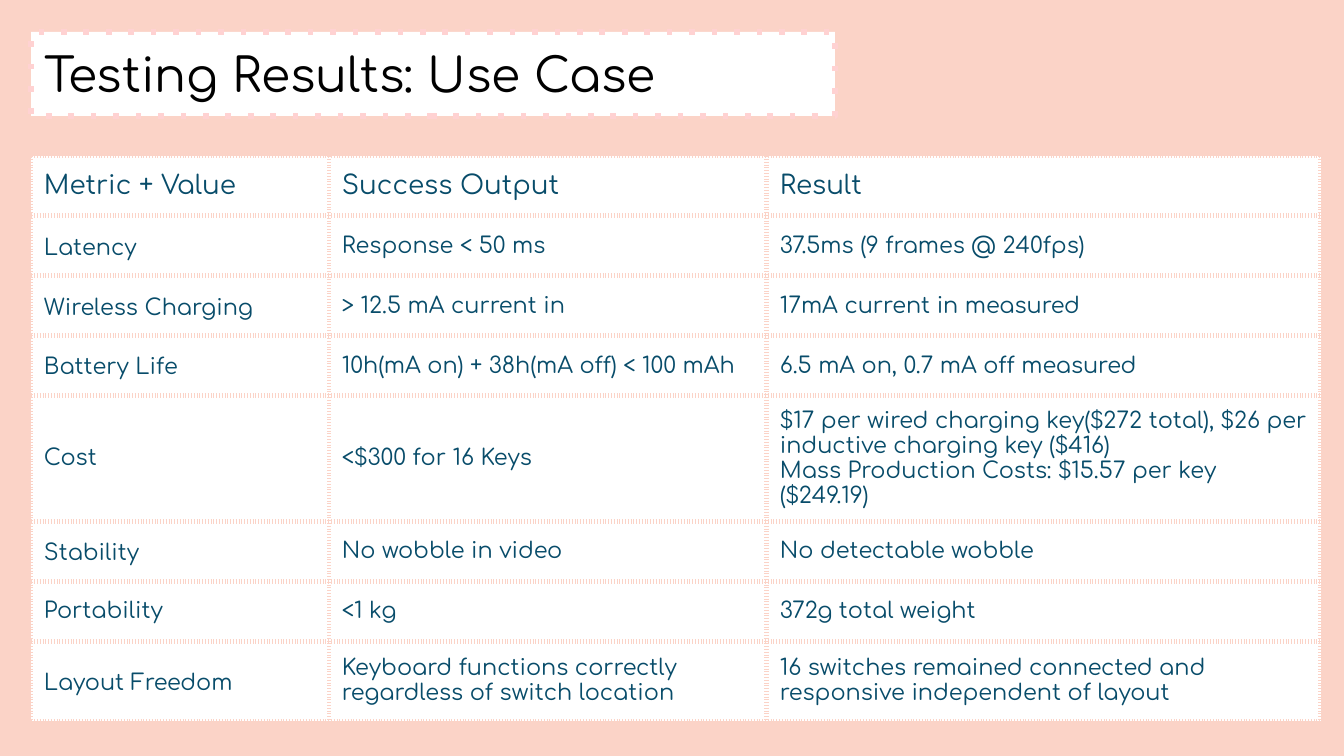
import pptx
import pptx.util
import pptx.dml.color
import pptx.enum.dml
import pptx.enum.shapes
import pptx.enum.text
import pptx.oxml
import pptx.oxml.ns

SCALE = 914400 / 134.4  # EMU per px
FONT = "Comfortaa"
COLORS = {
    "background": "FBD3C7",
    "title_line": "FFD2D2",
    "white": "FFFFFF",
    "black": "000000",
    "text": "084C6A",
}
INSET = 13
LINE_PT = 3

COLUMNS = [298, 438, 554]
ROW_HEIGHTS = [60, 60, 60, 60, 102, 60, 60, 80]
ROWS = [
    ("Metric + Value", "Success Output", "Result"),
    ("Latency", "Response < 50 ms", "37.5ms (9 frames @ 240fps)"),
    ("Wireless Charging", "> 12.5 mA current in", "17mA current in measured"),
    ("Battery Life", "10h(mA on) + 38h(mA off) < 100 mAh", "6.5 mA on, 0.7 mA off measured"),
    ("Cost", "<$300 for 16 Keys",
     "$17 per wired charging key($272 total), $26 per inductive charging key ($416)\n"
     "Mass Production Costs: $15.57 per key ($249.19)"),
    ("Stability", "No wobble in video", "No detectable wobble"),
    ("Portability", "<1 kg", "372g total weight"),
    ("Layout Freedom", "Keyboard functions correctly regardless of switch location",
     "16 switches remained connected and responsive independent of layout"),
]
SPACED_METRICS = {"Latency", "Wireless Charging", "Battery Life", "Stability", "Layout Freedom"}


def px(n):
    return pptx.util.Emu(round(n * SCALE))


def rgb(name):
    return pptx.dml.color.RGBColor.from_string(COLORS[name])


def fill_solid(fill, color):
    fill.solid()
    fill.fore_color.rgb = rgb(color)


def write_text(tf, text, size, color="text", line_spacing=None, space_after=None):
    for i, line in enumerate(text.split("\n")):
        p = tf.add_paragraph() if i else tf.paragraphs[0]
        p.alignment = pptx.enum.text.PP_ALIGN.LEFT
        if line_spacing:
            p.line_spacing = line_spacing
        if space_after:
            p.space_after = pptx.util.Pt(space_after)
        r = p.add_run()
        r.text = line
        r.font.name = FONT
        r.font.size = pptx.util.Pt(size)
        r.font.color.rgb = rgb(color)


def set_insets(obj):
    obj.margin_left = obj.margin_right = px(INSET)
    obj.margin_top = obj.margin_bottom = px(INSET)
    obj.vertical_anchor = pptx.enum.text.MSO_ANCHOR.MIDDLE


def add_title(s, x, y, w, h, text):
    sp = s.shapes.add_shape(pptx.enum.shapes.MSO_SHAPE.RECTANGLE, px(x), px(y), px(w), px(h))
    sp.shadow.inherit = False
    fill_solid(sp.fill, "white")
    sp.line.color.rgb = rgb("title_line")
    sp.line.width = pptx.util.Pt(LINE_PT)
    sp.line.dash_style = pptx.enum.dml.MSO_LINE.ROUND_DOT
    sp.line._get_or_add_ln().find(pptx.oxml.ns.qn("a:prstDash")).set("val", "dot")
    tf = sp.text_frame
    tf.word_wrap = True
    set_insets(tf)
    write_text(tf, text, 25.2, color="black")


def add_borders(cell):
    tc_pr = cell._tc.get_or_add_tcPr()
    for side in "LRTB":
        tc_pr.append(pptx.oxml.parse_xml(
            f'<a:ln{side} {pptx.oxml.ns.nsdecls("a")} w="{pptx.util.Pt(LINE_PT)}">'
            f'<a:solidFill><a:srgbClr val="{COLORS["background"]}"/></a:solidFill>'
            f'<a:prstDash val="dot"/></a:ln{side}>'))


def add_results_table(s, x, y):
    frame = s.shapes.add_table(len(ROWS), len(COLUMNS), px(x), px(y),
                               px(sum(COLUMNS)), px(sum(ROW_HEIGHTS)))
    table = frame.table
    table.first_row = table.horz_banding = False
    for column, width in zip(table.columns, COLUMNS):
        column.width = px(width)
    for i, (values, height) in enumerate(zip(ROWS, ROW_HEIGHTS)):
        table.rows[i].height = px(height)
        for j, value in enumerate(values):
            cell = table.cell(i, j)
            set_insets(cell)
            add_borders(cell)
            fill_solid(cell.fill, "white")
            spacing = {"line_spacing": 1.15, "space_after": 12} if value in SPACED_METRICS else {}
            write_text(cell.text_frame, value, 12 if i else 14, **spacing)


def main():
    prs = pptx.Presentation()
    prs.slide_width, prs.slide_height = px(1344), px(756)
    s = prs.slides.add_slide(prs.slide_layouts[6])
    fill_solid(s.background.fill, "background")

    # Heading
    add_title(s, 31, 32, 804, 84, "Testing Results: Use Case")

    # Metrics and their results
    add_results_table(s, 31, 156)

    prs.save("out.pptx")


if __name__ == "__main__":
    main()
